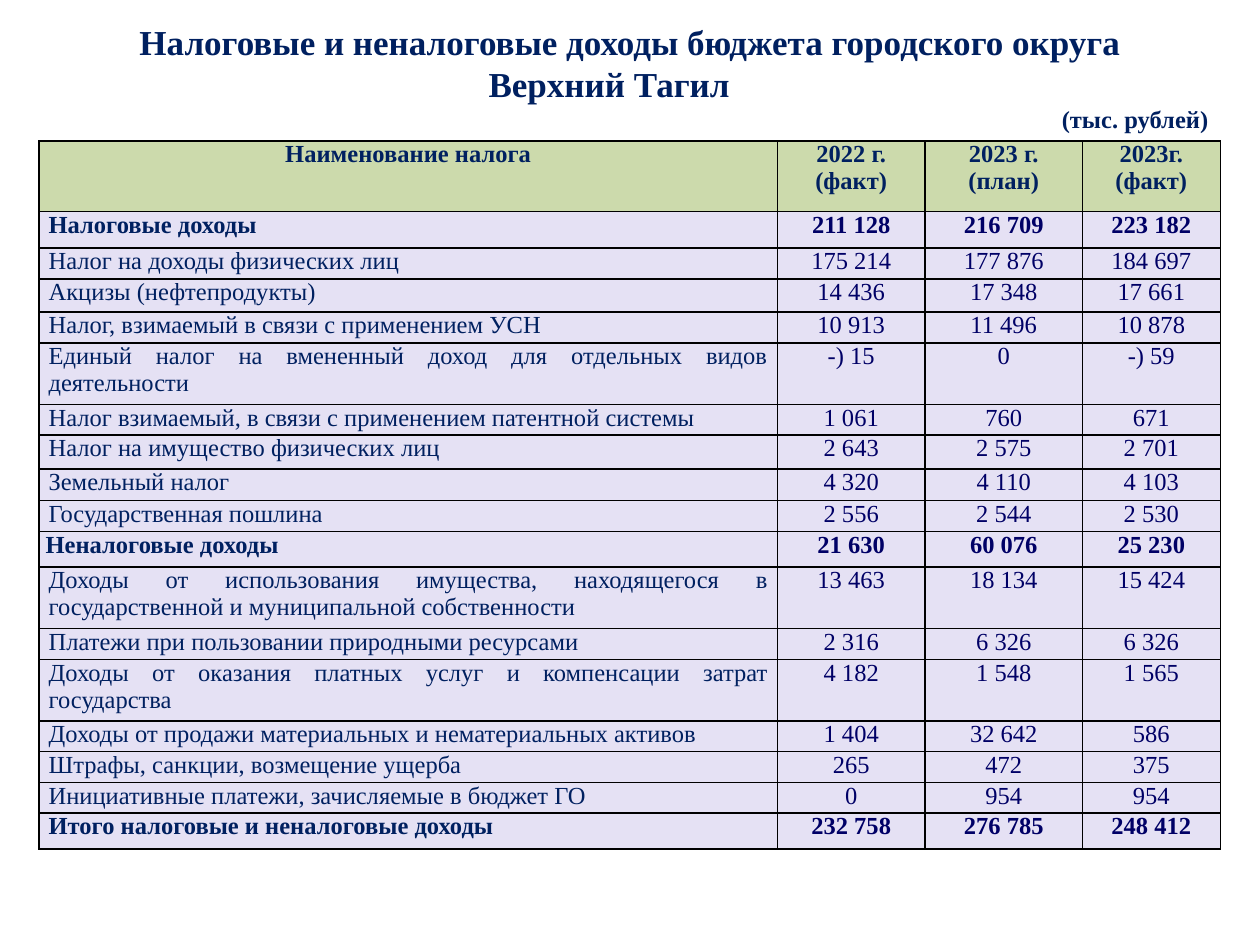
import pptx
import pptx.util
import pptx.dml.color
import pptx.enum.text
import pptx.oxml.ns
import lxml.etree

Cm = pptx.util.Cm
Pt = pptx.util.Pt
RGBColor = pptx.dml.color.RGBColor
ALIGN = pptx.enum.text.PP_ALIGN

NAVY = RGBColor(0x00, 0x20, 0x60)
INDIGO = RGBColor(0x00, 0x00, 0x66)
GREEN = RGBColor(0xCC, 0xDA, 0xAC)
LILAC = RGBColor(0xE5, 0xE1, 0xF4)
BLACK = RGBColor(0x00, 0x00, 0x00)
FONT = "Times New Roman"

LEFT = 0.79
WIDTHS = [14.88, 2.98, 3.17, 2.78]
HEAD = ["Наименование налога", "2022 г.\n(факт)", "2023 г.\n(план)", "2023г.\n(факт)"]
HEAD_HEIGHT = 1.42
ROWS = [
    (0.74, "Налоговые доходы", "211 128", "216 709", "223 182"),
    (0.62, "Налог на доходы физических лиц", "175 214", "177 876", "184 697"),
    (0.67, "Акцизы (нефтепродукты)", "14 436", "17 348", "17 661"),
    (0.62, "Налог, взимаемый в связи с применением УСН", "10 913", "11 496", "10 878"),
    (1.24, "Единый налог на вмененный доход для отдельных видов деятельности",
     "-) 15", "0", "-) 59"),
    (0.62, "Налог взимаемый, в связи с применением патентной системы",
     "1 061", "760", "671"),
    (0.68, "Налог на имущество физических лиц", "2 643", "2 575", "2 701"),
    (0.64, "Земельный налог", "4 320", "4 110", "4 103"),
    (0.62, "Государственная пошлина", "2 556", "2 544", "2 530"),
    (0.72, "Неналоговые доходы", "21 630", "60 076", "25 230"),
    (1.24, "Доходы от использования имущества, находящегося в государственной "
     "и муниципальной собственности", "13 463", "18 134", "15 424"),
    (0.62, "Платежи при пользовании природными ресурсами", "2 316", "6 326", "6 326"),
    (1.24, "Доходы от оказания платных услуг и компенсации затрат государства",
     "4 182", "1 548", "1 565"),
    (0.62, "Доходы от продажи материальных и нематериальных активов",
     "1 404", "32 642", "586"),
    (0.62, "Штрафы, санкции, возмещение ущерба", "265", "472", "375"),
    (0.62, "Инициативные платежи, зачисляемые в бюджет ГО", "0", "954", "954"),
    (0.72, "Итого налоговые и неналоговые доходы", "232 758", "276 785", "248 412"),
]
TOTALS = {"Налоговые доходы", "Неналоговые доходы", "Итого налоговые и неналоговые доходы"}
INSET_TOTAL = "Неналоговые доходы"


def style(par, size, color, bold, align):
    par.alignment = align
    for run in par.runs:
        run.font.name = FONT
        run.font.size = Pt(size)
        run.font.bold = bold
        run.font.color.rgb = color


def add_title(slide):
    box = slide.shapes.add_textbox(Cm(LEFT), Cm(0.28), Cm(23.82), Cm(2.57))
    frame = box.text_frame
    frame.word_wrap = True
    frame.text = ("Налоговые и неналоговые доходы бюджета городского округа\n"
                  "Верхний Тагил\n(тыс. рублей)")
    first, town, unit = frame.paragraphs
    style(first, 20, NAVY, True, ALIGN.CENTER)
    style(town, 20, NAVY, True, ALIGN.LEFT)
    town._p.get_or_add_pPr().set("marL", str(Cm(8.81)))
    style(unit, 14, NAVY, True, ALIGN.RIGHT)


def add_border(cell):
    qn = pptx.oxml.ns.qn
    props = cell._tc.get_or_add_tcPr()
    for side in ("lnL", "lnR", "lnT", "lnB"):
        line = lxml.etree.SubElement(props, qn("a:" + side), w=str(Pt(1)))
        fill = lxml.etree.SubElement(line, qn("a:solidFill"))
        lxml.etree.SubElement(fill, qn("a:srgbClr"), val=str(BLACK))


def fill_cell(cell, text, back, color, bold, align, inset):
    add_border(cell)
    cell.fill.solid()
    cell.fill.fore_color.rgb = back
    cell.margin_left = cell.margin_right = Cm(inset)
    cell.margin_top = cell.margin_bottom = 0
    cell.text_frame.text = text
    for par in cell.text_frame.paragraphs:
        style(par, 14, color, bold, align)


def add_table(slide):
    heights = [HEAD_HEIGHT] + [row[0] for row in ROWS]
    frame = slide.shapes.add_table(len(heights), len(WIDTHS), Cm(LEFT), Cm(2.84),
                                   Cm(sum(WIDTHS)), Cm(sum(heights)))
    table = frame.table
    table.first_row = table.horz_banding = False
    for col, width in zip(table.columns, WIDTHS):
        col.width = Cm(width)
    for row, height in zip(table.rows, heights):
        row.height = Cm(height)
    for col, text in enumerate(HEAD):
        fill_cell(table.cell(0, col), text, GREEN, NAVY, True, ALIGN.CENTER, 0.13)
    for index, (_, name, *sums) in enumerate(ROWS, 1):
        bold = name in TOTALS
        inset, align = (0.13, ALIGN.LEFT) if name == INSET_TOTAL else (0.19, ALIGN.JUSTIFY)
        fill_cell(table.cell(index, 0), name, LILAC, NAVY, bold, align, inset)
        for col, text in enumerate(sums, 1):
            fill_cell(table.cell(index, col), text, LILAC, INDIGO, bold, ALIGN.CENTER, 0.13)


def main():
    deck = pptx.Presentation()
    deck.slide_width = Cm(25.4)
    deck.slide_height = Cm(19.05)
    slide = deck.slides.add_slide(deck.slide_layouts[6])
    add_title(slide)
    add_table(slide)
    deck.save("out.pptx")


if __name__ == "__main__":
    main()
